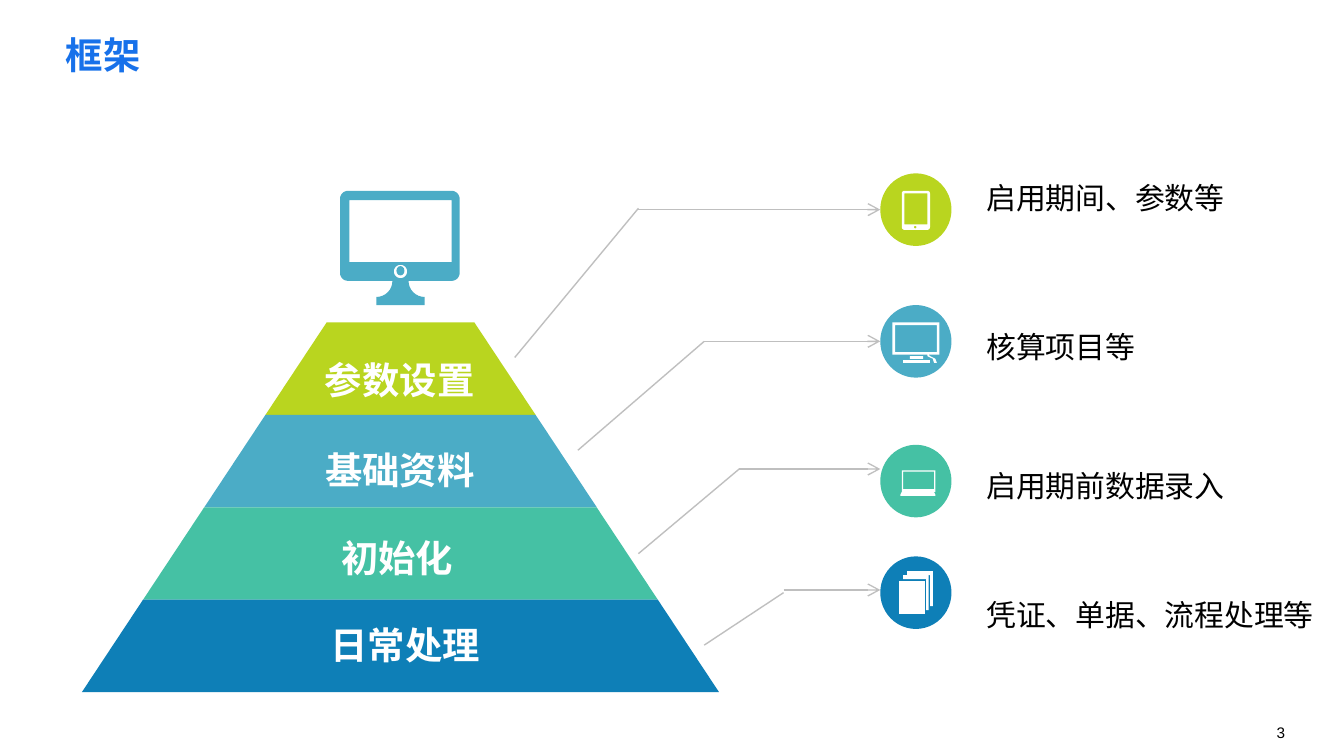
import math
from dataclasses import dataclass

import pptx
import pptx.dml.color
import pptx.enum.shapes
import pptx.enum.text
import pptx.oxml
import pptx.oxml.ns
import pptx.util

Inches = pptx.util.Inches
SHAPE = pptx.enum.shapes.MSO_SHAPE
ALIGN = pptx.enum.text.PP_ALIGN
ANCHOR = pptx.enum.text.MSO_ANCHOR


@dataclass(frozen=True)
class Theme:
    title: str = "1771EA"
    lime: str = "B9D51F"
    sky: str = "4BACC6"
    mint: str = "45C1A4"
    blue: str = "0E7FB7"
    line: str = "BFBFBF"
    white: str = "FFFFFF"
    black: str = "000000"
    heading_pt: float = 20
    body_pt: float = 16
    number_pt: float = 8.2
    line_pt: float = 0.75
    cjk: str = "Noto Sans CJK SC"


T = Theme()
BANDS = [  # label, fill, label box (left, top, width) within the pyramid
    ("参数设置", T.lime, (1.6, 0.23, 1.53)),
    ("基础资料", T.sky, (1.47, 0.9, 1.79)),
    ("初始化", T.mint, (1.17, 1.55, 2.35)),
    ("日常处理", T.blue, (1.23, 2.2, 2.35)),
]


def rgb(value):
    return pptx.dml.color.RGBColor.from_string(value)


# Basic parts
def format_text(sp, text, size, color, font, bold=False, align=ALIGN.LEFT,
                anchor=ANCHOR.TOP, insets=(0.1, 0.05)):
    tf = sp.text_frame
    tf.word_wrap = True
    tf.vertical_anchor = anchor
    tf.margin_left = tf.margin_right = Inches(insets[0])
    tf.margin_top = tf.margin_bottom = Inches(insets[1])
    p = tf.paragraphs[0]
    p.alignment = align
    r = p.add_run()
    r.text = text
    r.font.size = pptx.util.Pt(size)
    r.font.bold = bold
    r.font.name = font
    r.font.color.rgb = rgb(color)
    r._r.get_or_add_rPr().append(pptx.oxml.parse_xml(
        f'<a:ea {pptx.oxml.ns.nsdecls("a")} typeface="{T.cjk}"/>'))


def add_text(shapes, box, text, **style):
    format_text(shapes.add_textbox(*map(Inches, box)), text, **style)


def paint(sp, color):
    sp.shadow.inherit = False
    sp.fill.solid()
    sp.fill.fore_color.rgb = rgb(color)
    sp.line.fill.background()


def add_preset(shapes, kind, box, color):
    paint(shapes.add_shape(kind, *map(Inches, box)), color)


def add_outline(shapes, x, y, contours, color):
    """Fill closed contours given relative to (x, y); inner ones are holes."""
    builder = None
    for contour in contours:
        points = [(Inches(x + px), Inches(y + py)) for px, py in contour]
        if builder is None:
            builder = shapes.build_freeform(*points[0], scale=1.0)
        else:
            builder.move_to(*points[0])
        builder.add_line_segments(points[1:], close=True)
    paint(builder.convert_to_shape(), color)


def add_line(shapes, start, end, arrow=False):
    ends = map(Inches, (*start, *end))
    line = shapes.add_connector(pptx.enum.shapes.MSO_CONNECTOR.STRAIGHT, *ends)
    line.line.color.rgb = rgb(T.line)
    line.line.width = pptx.util.Pt(T.line_pt)
    ns = pptx.oxml.ns.nsdecls("a")
    if arrow:
        line.line._get_or_add_ln().append(
            pptx.oxml.parse_xml(f'<a:tailEnd {ns} type="arrow"/>'))
    line._element.spPr.append(pptx.oxml.parse_xml(f"<a:effectLst {ns}/>"))


# Contours
def rect(x, y, w, h):
    return [(x, y), (x + w, y), (x + w, y + h), (x, y + h)]


def arc(cx, cy, r, start, end, steps=8):
    angles = [math.radians(start + (end - start) * i / steps)
              for i in range(steps + 1)]
    return [(cx + r * math.cos(a), cy + r * math.sin(a)) for a in angles]


def rounded(x, y, w, h, r):
    centres = [(x + w - r, y + h - r), (x + r, y + h - r),
               (x + r, y + r), (x + w - r, y + r)]
    return [pt for i, (cx, cy) in enumerate(centres)
            for pt in arc(cx, cy, r, 90 * i, 90 * i + 90)]


# Icons, each placed from the corner of its box
def computer_icon(shapes, x, y):
    left_neck = arc(0.27, 0.67, 0.12, 0, 90)
    right_neck = [(0.9 - px, py) for px, py in reversed(left_neck)]
    stand = left_neck + [(0.27, 0.85), (0.63, 0.85)] + right_neck
    group = shapes.add_group_shape().shapes
    add_outline(group, x, y, [rounded(0, 0, 0.89, 0.67, 0.06), stand,
                              arc(0.45, 0.6, 0.05, 0, 360, 24),
                              rect(0.07, 0.07, 0.76, 0.46)], T.sky)
    add_preset(group, SHAPE.OVAL, (x + 0.42, y + 0.56, 0.06, 0.07), T.sky)


def tablet_icon(shapes, x, y):
    add_outline(shapes, x, y, [rounded(0.16, 0.13, 0.21, 0.29, 0.02),
                               rect(0.18, 0.15, 0.17, 0.23),
                               arc(0.26, 0.4, 0.01, 0, 360)], T.white)


def monitor_icon(shapes, x, y):
    cable = [(0.35, 0.37), (0.35, 0.38), (0.37, 0.39), (0.39, 0.4),
             (0.4, 0.43), (0.42, 0.43), (0.41, 0.4), (0.37, 0.38), (0.36, 0.37)]
    add_outline(shapes, x, y, [rect(0.09, 0.13, 0.35, 0.24),
                               rect(0.11, 0.15, 0.31, 0.2), cable], T.white)
    for left, top, width in ((0.22, 0.38, 0.1), (0.17, 0.41, 0.2)):
        add_preset(shapes, SHAPE.RECTANGLE, (x + left, y + top, width, 0.02), T.white)


def laptop_icon(shapes, x, y):
    base = [(0.16, 0.35), (0.4, 0.35), (0.41, 0.37), (0.41, 0.38),
            (0.15, 0.38), (0.15, 0.37)]
    add_outline(shapes, x, y, [rect(0.16, 0.19, 0.25, 0.16),
                               rect(0.17, 0.2, 0.23, 0.13)], T.white)
    add_outline(shapes, x, y, [base], T.white)


def documents_icon(shapes, x, y):
    sheet = [(0.17, 0.14), (0.36, 0.14), (0.36, 0.4), (0.34, 0.4),
             (0.34, 0.17), (0.17, 0.17)]
    for shift in (0, 0.03):
        add_outline(shapes, x + shift, y - shift, [sheet], T.white)
    add_outline(shapes, x, y, [rect(0.14, 0.18, 0.19, 0.25)], T.white)


# Regions
def add_title(slide, box, text):
    sp = slide.shapes.title
    sp.left, sp.top, sp.width, sp.height = map(Inches, box)
    format_text(sp, text, size=T.heading_pt, color=T.title, font=T.cjk,
                bold=True, insets=(0, 0))


def add_pyramid(slide, x, y, w, h):
    step, slope, mid = h / len(BANDS), 0.455, w / 2
    for i, (label, color, (left, top, width)) in enumerate(BANDS):
        upper = 0.55 + i * slope
        lower = upper + slope
        band = [(mid - upper, i * step), (mid + upper, i * step),
                (mid + lower, (i + 1) * step), (mid - lower, (i + 1) * step)]
        add_outline(slide.shapes, x, y, [band], color)
        add_text(slide.shapes, (x + left, y + top, width, 0.39), label,
                 size=T.heading_pt, color=T.white, font="Open Sans", bold=True,
                 align=ALIGN.CENTER, insets=(0.05, 0.03))


def add_callout(slide, x, y, start, elbow, arrow_y, label, label_y, label_w,
                color, icon):
    add_line(slide.shapes, start, elbow)
    add_line(slide.shapes, (elbow[0], arrow_y), (x, arrow_y), arrow=True)
    add_preset(slide.shapes, SHAPE.OVAL, (x, y, 0.53, 0.54), color)
    icon(slide.shapes.add_group_shape().shapes, x, y)
    add_text(slide.shapes, (x + 0.69, y + label_y, label_w, 0.37), label,
             size=T.body_pt, color=T.black, font="Calibri")


def main():
    prs = pptx.Presentation()
    prs.slide_width = Inches(10)
    prs.slide_height = prs.slide_width * 9 // 16
    slide = prs.slides.add_slide(prs.slide_layouts[5])
    add_title(slide, (0.49, 0.24, 9.19, 0.57), "框架")
    add_pyramid(slide, 0.61, 2.4, 4.74, 2.75)
    computer_icon(slide.shapes, 2.53, 1.42)
    callouts = [  # circle top, line start, elbow, arrow y, label, its offset and width, icon
        (1.29, (3.83, 2.66), (4.75, 1.55), 1.56, "启用期间、参数等", 0, 2.28, tablet_icon),
        (2.27, (4.3, 3.35), (5.24, 2.54), 2.54, "核算项目等", 0.13, 2.13, monitor_icon),
        (3.31, (4.75, 4.12), (5.5, 3.49), 3.49, "启用期前数据录入", 0.12, 2.54, laptop_icon),
        (4.14, (5.24, 4.8), (5.83, 4.41), 4.39, "凭证、单据、流程处理等", 0.25, 2.76,
         documents_icon),
    ]
    for (_, color, _), (*place, icon) in zip(BANDS, callouts):
        add_callout(slide, 6.55, *place, color, icon)
    add_text(slide.shapes, (9.5, 5.38, 0.5, 0.14), "3", size=T.number_pt,
             color=T.black, font="Arial", anchor=ANCHOR.MIDDLE, insets=(0, 0))
    prs.save("out.pptx")


if __name__ == "__main__":
    main()
